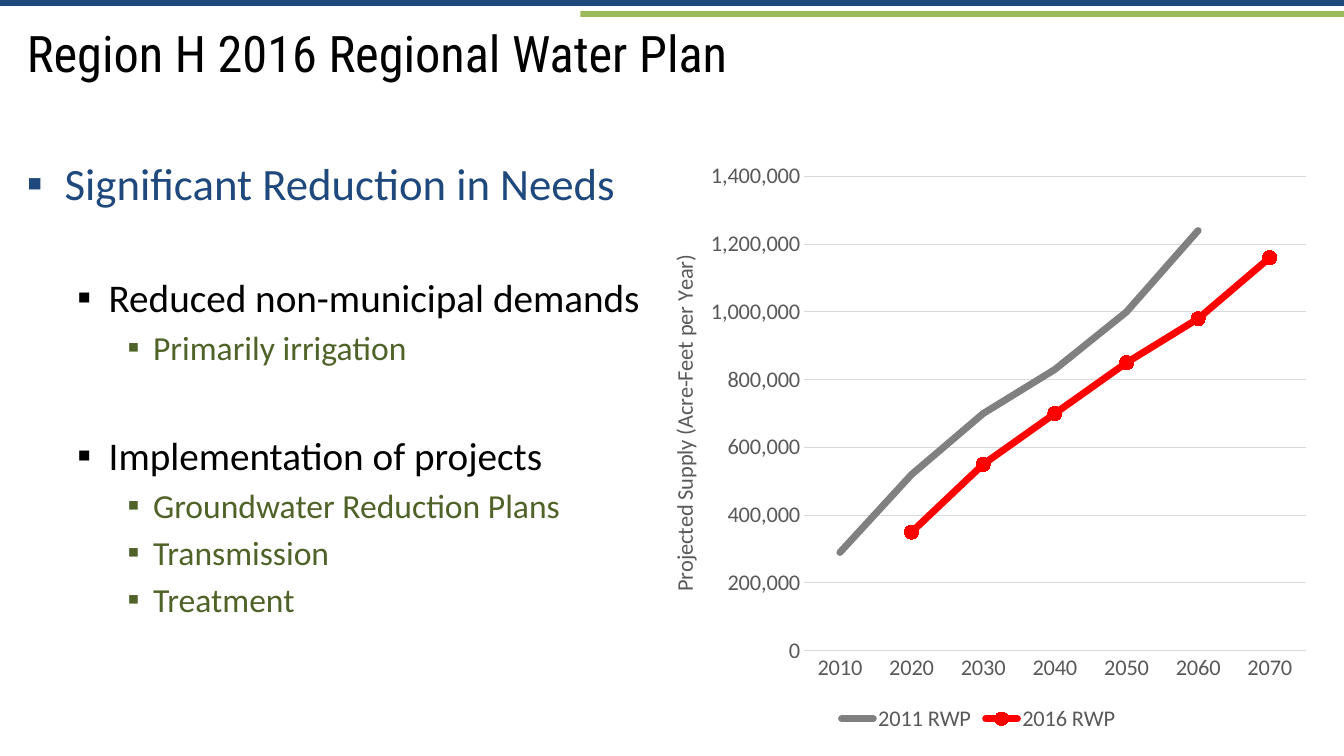
from lxml.etree import SubElement
from pptx import Presentation
from pptx.chart.data import CategoryChartData
from pptx.dml.color import RGBColor
from pptx.enum.chart import XL_CHART_TYPE, XL_LEGEND_POSITION, XL_MARKER_STYLE, XL_TICK_MARK
from pptx.enum.shapes import MSO_SHAPE
from pptx.enum.text import MSO_ANCHOR
from pptx.oxml import parse_xml
from pptx.oxml.ns import nsdecls, qn
from pptx.util import Cm, Pt

NAVY, GREEN, DARK_GREEN = "1F497D", "9BBB59", "4F6228"
BLACK, GREY, RED = "000000", "808080", "FF0000"
AXIS_TEXT, GRID = "595959", "D9D9D9"


def rgb(hex_code):
    return RGBColor.from_string(hex_code)


def manual_layout(**settings):
    fields = "".join(f'<c:{key} val="{value}"/>' for key, value in settings.items())
    return parse_xml(f'<c:layout {nsdecls("c")}><c:manualLayout>{fields}'
                     "</c:manualLayout></c:layout>")


class WaterPlanSlide:
    heading_font = "Roboto Condensed"
    body_font = "Calibri"
    # level: margin (cm), hanging indent (cm), size (pt), colour
    levels = [(0.95, 0.95, 32, NAVY), (2.06, 0.79, 28, BLACK), (3.18, 0.64, 24, DARK_GREEN)]

    def __init__(self, presentation):
        self.slide = presentation.slides.add_slide(presentation.slide_layouts[6])

    def style(self, font, size, color, name=body_font):
        font.name, font.size, font.bold = name, Pt(size), False
        font.color.rgb = rgb(color)

    def bar(self, left, top, width, height, color):
        bar = self.slide.shapes.add_shape(
            MSO_SHAPE.RECTANGLE, Cm(left), Cm(top), Cm(width), Cm(height))
        bar.shadow.inherit = False
        bar.fill.solid()
        bar.fill.fore_color.rgb = rgb(color)
        bar.line.fill.background()

    def text_frame(self, left, top, width, height):
        frame = self.slide.shapes.add_textbox(
            Cm(left), Cm(top), Cm(width), Cm(height)).text_frame
        frame.word_wrap = True
        frame.vertical_anchor = MSO_ANCHOR.TOP
        return frame

    def title(self, text, *box):
        heading = self.text_frame(*box).paragraphs[0]
        heading.text = text
        self.style(heading.font, 36, BLACK, self.heading_font)

    def outline(self, items, *box):
        frame = self.text_frame(*box)
        for index, (level, text) in enumerate(items):
            margin, hanging, size, color = self.levels[level]
            point = frame.add_paragraph() if index else frame.paragraphs[0]
            point.text = text
            point.level = level
            if index:
                point.space_before = Pt(45.4 if level == 1 else 0.2 * size)
            properties = point._p.get_or_add_pPr()
            properties.set("marL", str(Cm(margin)))
            properties.set("indent", str(-Cm(hanging)))
            SubElement(properties, qn("a:buFont"), typeface=self.body_font)
            SubElement(properties, qn("a:buChar"), char="▪")
            self.style(point.font, size, color)

    def line_chart(self, categories, series, axis_title, *box):
        data = CategoryChartData(number_format="#,##0")
        data.categories = categories
        for name, values, _, _ in series:
            data.add_series(name, values)
        chart = self.slide.shapes.add_chart(
            XL_CHART_TYPE.LINE_MARKERS, *map(Cm, box), data).chart
        self.style(chart.font, 16, AXIS_TEXT)
        chart.has_title = False
        plot = chart.plots[0]
        plot.vary_by_categories = False

        # Series lines and markers
        for line, (_, _, color, marked) in zip(plot.series, series):
            line.smooth = False
            line.format.line.color.rgb = rgb(color)
            line.format.line.width = Pt(5)
            line.format.line._get_or_add_ln().set("cap", "rnd")
            line.marker.style = XL_MARKER_STYLE.CIRCLE if marked else XL_MARKER_STYLE.NONE
            if marked:
                line.marker.size = 10
                line.marker.format.fill.solid()
                line.marker.format.fill.fore_color.rgb = rgb(color)
                line.marker.format.line.color.rgb = rgb(color)

        # Axes and grid
        years, supply = chart.category_axis, chart.value_axis
        for axis in (years, supply):
            axis.major_tick_mark = axis.minor_tick_mark = XL_TICK_MARK.NONE
            self.style(axis.tick_labels.font, 16, AXIS_TEXT)
        supply.minimum_scale, supply.maximum_scale, supply.major_unit = 0, 1400000, 200000
        supply.tick_labels.number_format = "#,##0"
        supply.tick_labels.number_format_is_linked = False
        supply.format.line.fill.background()
        supply.has_major_gridlines = True
        for rule in (years.format.line, supply.major_gridlines.format.line):
            rule.color.rgb = rgb(GRID)
            rule.width = Pt(0.75)

        # Vertical axis title
        supply.has_title = True
        caption = supply.axis_title.text_frame
        caption.text = axis_title
        self.style(caption.paragraphs[0].runs[0].font, 16, AXIS_TEXT)
        caption._txBody.find(qn("a:bodyPr")).set("rot", "-5400000")
        title_xml = supply.axis_title._element
        for old in title_xml.findall(qn("c:layout")):
            title_xml.remove(old)
        title_xml.find(qn("c:tx")).addnext(
            manual_layout(xMode="edge", yMode="edge", x=0.04, y=0.17))

        # Legend and plot area
        chart.has_legend = True
        chart.legend.position = XL_LEGEND_POSITION.BOTTOM
        chart.legend.include_in_layout = False
        self.style(chart.legend.font, 16, AXIS_TEXT)
        area = chart._chartSpace.chart.plotArea
        for old in area.findall(qn("c:layout")):
            area.remove(old)
        area.insert(0, manual_layout(layoutTarget="inner", xMode="edge", yMode="edge",
                                     x=0.244, y=0.043, w=0.737, h=0.81))


def main():
    presentation = Presentation()
    presentation.slide_width, presentation.slide_height = Cm(33.87), Cm(19.05)
    page = WaterPlanSlide(presentation)

    # Header
    page.bar(0, 0, 33.87, 0.15, NAVY)
    page.bar(14.63, 0.28, 19.24, 0.15, GREEN)
    page.title("Region H 2016 Regional Water Plan", 0.43, 0.43, 32.82, 2.34)

    # Findings
    findings = [
        (0, "Significant Reduction in Needs"),
        (1, "Reduced non-municipal demands"),
        (2, "Primarily irrigation"),
        (1, "Implementation of projects"),
        (2, "Groundwater Reduction Plans"),
        (2, "Transmission"),
        (2, "Treatment"),
    ]
    page.outline(findings, 0.43, 3.81, 32.82, 14.61)

    # Projected supply by plan
    decades = [str(year) for year in range(2010, 2071, 10)]
    plans = [
        ("2011 RWP", (290000, 520000, 700000, 830000, 1000000, 1240000, None), GREY, False),
        ("2016 RWP", (None, 350000, 550000, 700000, 850000, 980000, 1160000), RED, True),
    ]
    page.line_chart(decades, plans, "Projected Supply (Acre-Feet per Year)",
                    16.08, 3.81, 17.15, 14.76)

    presentation.save("out.pptx")


if __name__ == "__main__":
    main()
